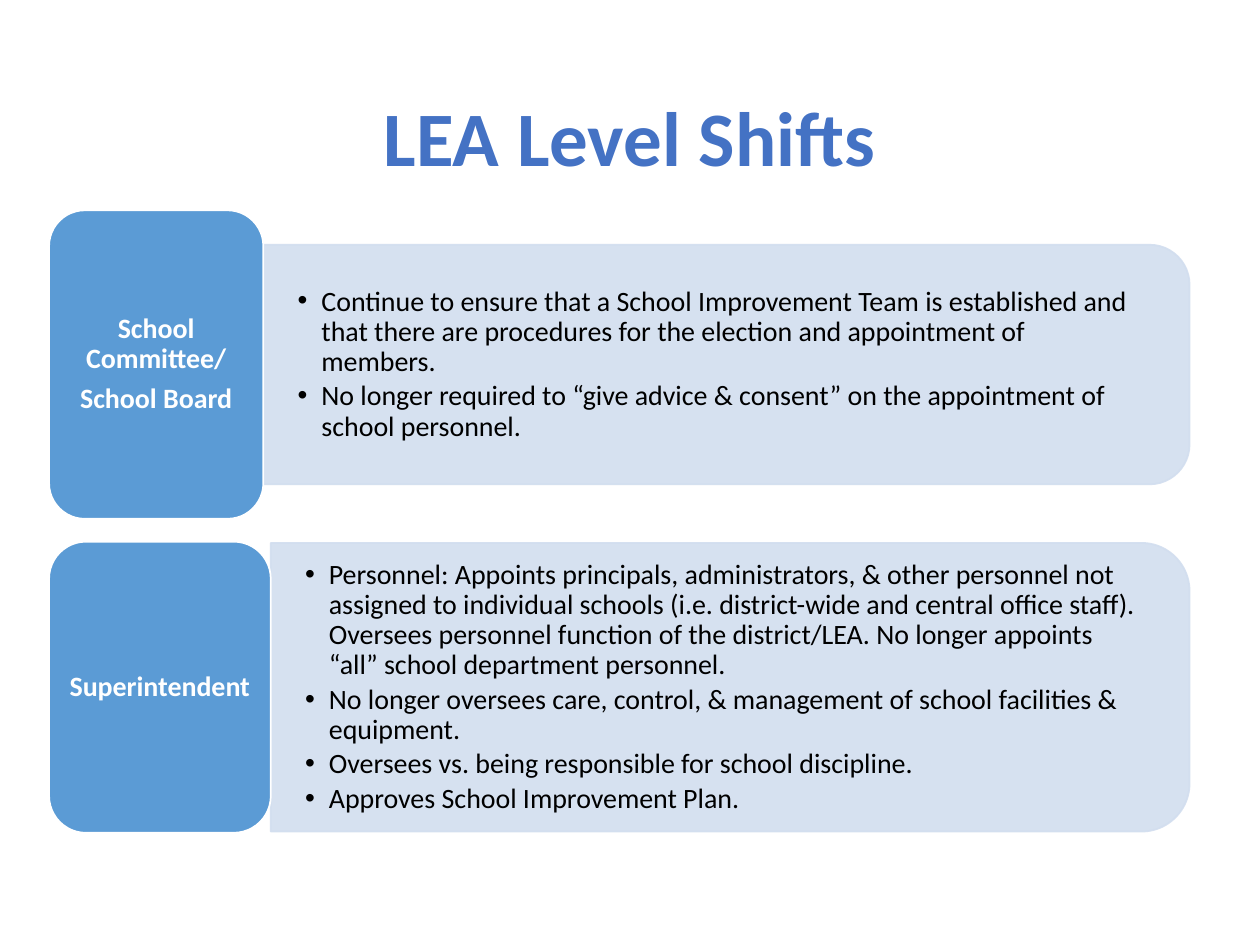
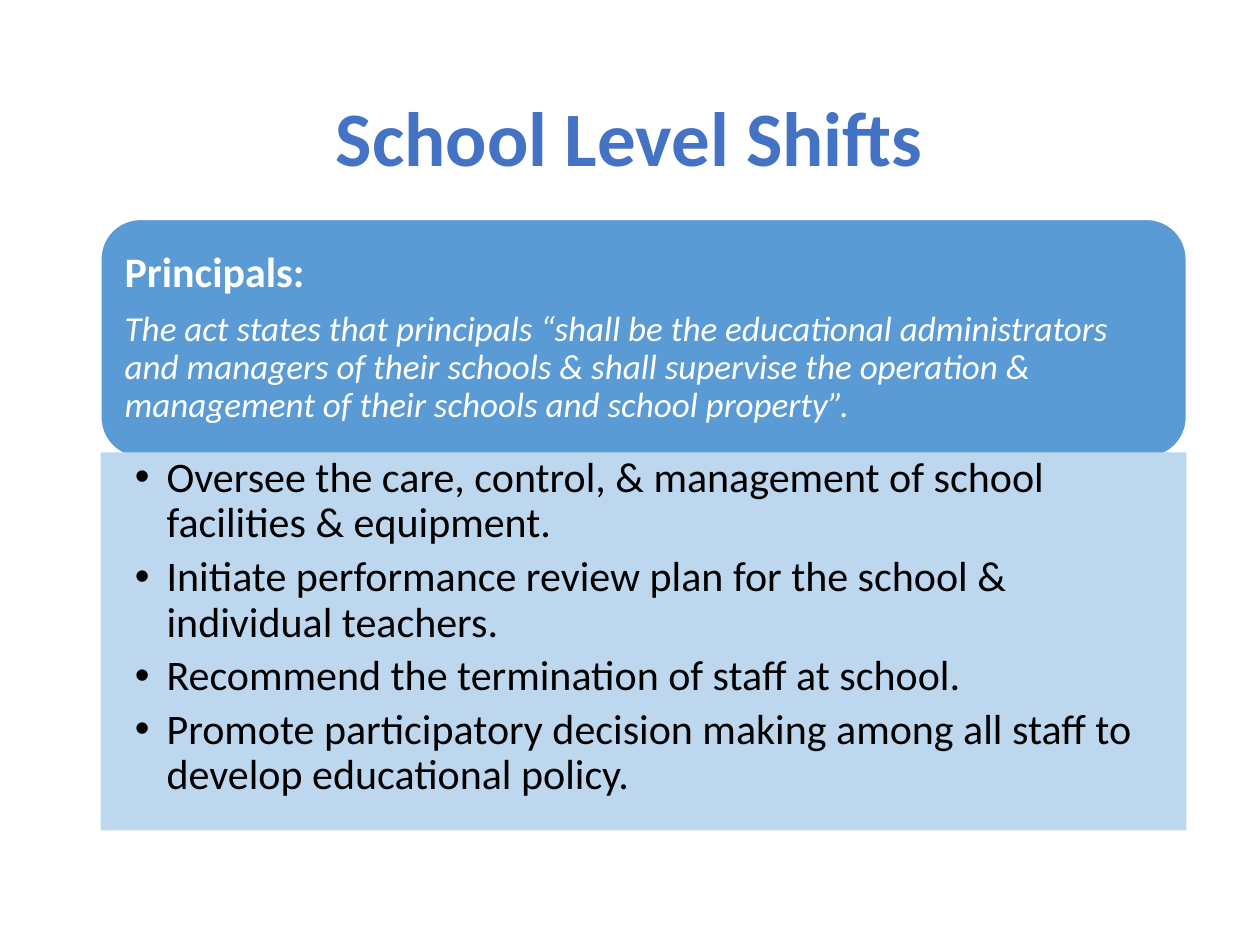
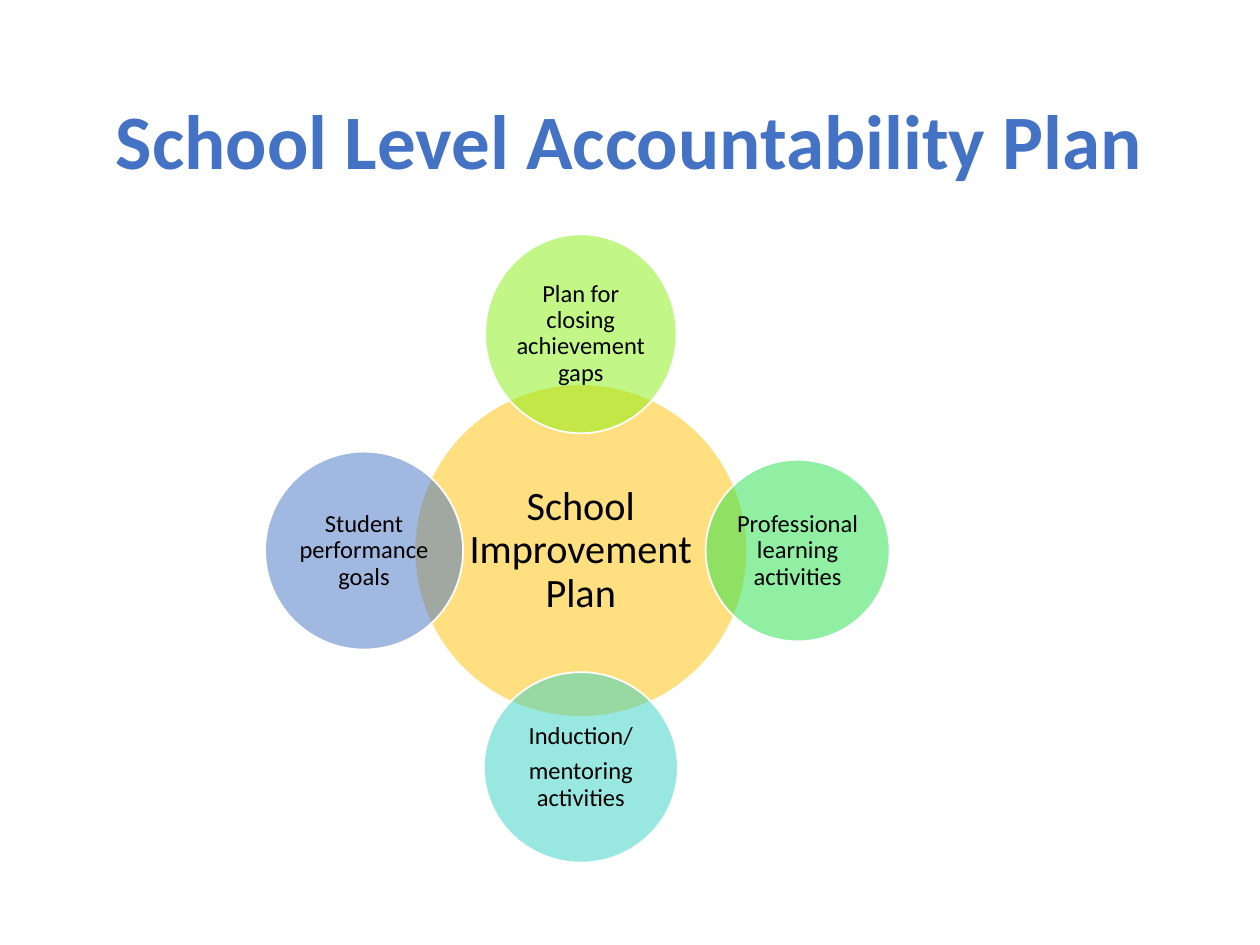
import math

import lxml.etree
import pptx
import pptx.dml.color
import pptx.enum.shapes
import pptx.enum.text
import pptx.oxml.ns
import pptx.util

Cm = pptx.util.Cm
Pt = pptx.util.Pt
SHAPE = pptx.enum.shapes.MSO_SHAPE
ALIGN = pptx.enum.text.PP_ALIGN
ANCHOR = pptx.enum.text.MSO_ANCHOR

FONT = "Calibri"
TITLE_COLOR, BLUE, PALE, SKY = "4472C4", "5B9BD5", "D2DEEF", "BDD7EE"
WHITE, BLACK = "FFFFFF", "000000"
TITLE_LEFT, TITLE_TOP, TITLE_W, TITLE_H = 1.75, 1.02, 21.89, 3.68
CORNER_INSET = 0.29 / 6

ROW_LEFT, ROW_RIGHT = 0.99, 23.98
ROWS = [
    {"label": ["School Committee/", "School Board"],
     "top": 4.24, "label_w": 4.32, "label_h": 6.22, "panel_h": 4.83,
     "points": [
         "Continue to ensure that a School Improvement Team is established and that there are procedures for the election and appointment of members.",
         "No longer required to “give advice & consent” on the appointment of school personnel."]},
    {"label": ["Superintendent"],
     "top": 10.92, "label_w": 4.47, "label_h": 5.87, "panel_h": 5.82,
     "points": [
         "Personnel: Appoints principals, administrators, & other personnel not assigned to individual schools (i.e. district-wide and central office staff). Oversees personnel function of the district/LEA. No longer appoints “all” school department personnel.",
         "No longer oversees care, control, & management of school facilities & equipment.",
         "Oversees vs. being responsible for school discipline.",
         "Approves School Improvement Plan."]},
]

PRINCIPALS = "Principals:"
ACT = "The act states that principals “shall be the educational administrators and managers of their schools & shall supervise the operation & management of their schools and school property”."
DUTIES = [
    "Oversee the care, control, & management of school facilities & equipment.",
    "Initiate performance review plan for the school & individual teachers.",
    "Recommend the termination of staff at school.",
    "Promote participatory decision making among all staff to develop educational policy.",
]

HUB_X, HUB_Y, HUB_SIZE, ORBIT = 11.71, 11.1, 6.71, 4.37
HUB = ("School Improvement Plan", "FFC000")
SATELLITES = [
    (["Plan for closing achievement gaps"], "86F011", 3.86, 4.01),
    (["Professional learning activities"], "23E148", 3.71, 3.66),
    (["Induction/", "mentoring activities"], "33D2C5", 3.91, 3.84),
    (["Student performance goals"], "4472C4", 3.99, 3.99),
]


def rgb(value):
    return pptx.dml.color.RGBColor.from_string(value)


def paint(fill, color, opacity=100):
    fill.solid()
    fill.fore_color.rgb = rgb(color)
    if opacity < 100:
        srgb = fill._xPr.find(".//" + pptx.oxml.ns.qn("a:srgbClr"))
        alpha = lxml.etree.SubElement(srgb, pptx.oxml.ns.qn("a:alpha"))
        alpha.set("val", str(opacity * 1000))


def add_box(s, kind, left, top, width, height, color, line=WHITE, opacity=100, line_opacity=100):
    sp = s.shapes.add_shape(kind, Cm(left), Cm(top), Cm(width), Cm(height))
    sp.shadow.inherit = False
    paint(sp.fill, color, opacity)
    if line:
        sp.line.width = Pt(1)
        paint(sp.line.fill, line, line_opacity)
    else:
        sp.line.fill.background()
    return sp


def set_frame(sp, side, edge, right=None, anchor=ANCHOR.MIDDLE):
    tf = sp.text_frame
    tf.word_wrap = True
    tf.vertical_anchor = anchor
    tf.margin_left = Cm(side)
    tf.margin_right = Cm(side if right is None else right)
    tf.margin_top = tf.margin_bottom = Cm(edge)
    return tf


def add_text(tf, text, size=16, color=BLACK, bold=False, italic=False,
             align=ALIGN.CENTER, after=0.35, hang=None):
    p = tf.paragraphs[0] if not tf.paragraphs[0].runs else tf.add_paragraph()
    p.alignment = align
    p.line_spacing = 0.9
    p.space_after = Pt(round(size * after, 1))
    if hang:
        p.level = 1
        pPr = p._p.get_or_add_pPr()
        pPr.set("marL", str(Cm(hang)))
        pPr.set("indent", str(-Cm(hang)))
        lxml.etree.SubElement(pPr, pptx.oxml.ns.qn("a:buFont")).set("typeface", "Arial")
        lxml.etree.SubElement(pPr, pptx.oxml.ns.qn("a:buChar")).set("char", "•")
    r = p.add_run()
    r.text = text
    r.font.name = FONT
    r.font.size = Pt(size)
    r.font.bold = bold
    r.font.italic = italic
    r.font.color.rgb = rgb(color)


def add_slide(prs, title, top=TITLE_TOP):
    s = prs.slides.add_slide(prs.slide_layouts[5])
    sp = s.shapes.title
    sp.left, sp.top, sp.width, sp.height = Cm(TITLE_LEFT), Cm(top), Cm(TITLE_W), Cm(TITLE_H)
    add_text(set_frame(sp, 0.25, 0.13), title, size=44, color=TITLE_COLOR, bold=True, after=0)
    return s


def add_row(s, row):
    left = ROW_LEFT + row["label_w"]
    width, height = ROW_RIGHT - left, row["panel_h"]
    center_x = left + width / 2
    center_y = row["top"] + row["label_h"] / 2
    panel = add_box(s, SHAPE.ROUND_2_SAME_RECTANGLE, center_x - height / 2, center_y - width / 2,
                    height, width, PALE, line=PALE, opacity=90, line_opacity=90)
    panel.rotation = 90
    inset = height * CORNER_INSET
    box = s.shapes.add_textbox(Cm(left), Cm(center_y - height / 2 + inset),
                               Cm(width - inset), Cm(height - 2 * inset))
    tf = set_frame(box, 0.69, 0.36)
    for point in row["points"]:
        add_text(tf, point, align=ALIGN.LEFT, after=0.15, hang=0.48)
    label = add_box(s, SHAPE.ROUNDED_RECTANGLE, ROW_LEFT, row["top"],
                    row["label_w"], row["label_h"], BLUE)
    tf = set_frame(label, 0.18, 0.08)
    for line in row["label"]:
        add_text(tf, line, color=WHITE, bold=True)


def add_circle(s, lines, color, center_x, center_y, width, height, size, margin):
    sp = add_box(s, SHAPE.OVAL, center_x - width / 2, center_y - height / 2,
                 width, height, color, opacity=50)
    tf = set_frame(sp, margin, margin)
    for line in lines:
        add_text(tf, line, size=size)


def build_lea(prs):
    s = add_slide(prs, "LEA Level Shifts")
    for row in ROWS:
        add_row(s, row)


def build_school(prs):
    s = add_slide(prs, "School Level Shifts")
    header = add_box(s, SHAPE.ROUNDED_RECTANGLE, 2.03, 4.42, TITLE_W, 4.8, BLUE)
    tf = set_frame(header, 0.25, 0.25)
    add_text(tf, PRINCIPALS, size=24, color=WHITE, bold=True, align=ALIGN.LEFT)
    add_text(tf, ACT, size=20, color=WHITE, italic=True, align=ALIGN.LEFT)
    duties = add_box(s, SHAPE.RECTANGLE, 2.03, 9.12, TITLE_W, 7.62, SKY, line=None)
    tf = set_frame(duties, 0.69, 0.08, right=0.48, anchor=ANCHOR.TOP)
    for duty in DUTIES:
        add_text(tf, duty, size=24, align=ALIGN.LEFT, after=0.2, hang=0.64)


def build_plan(prs):
    s = add_slide(prs, "School Level Accountability Plan", top=1.07)
    text, color = HUB
    add_circle(s, [text], color, HUB_X, HUB_Y, HUB_SIZE, HUB_SIZE, 23, 0.08)
    for i, (lines, color, width, height) in enumerate(SATELLITES):
        angle = 2 * math.pi * i / len(SATELLITES) - math.pi / 2
        add_circle(s, lines, color, HUB_X + ORBIT * math.cos(angle),
                   HUB_Y + ORBIT * math.sin(angle), width, height, 14, 0.05)


def main():
    prs = pptx.Presentation()
    prs.slide_width, prs.slide_height = Cm(25.4), Cm(19.05)
    build_lea(prs)
    build_school(prs)
    build_plan(prs)
    prs.save("out.pptx")


if __name__ == "__main__":
    main()
